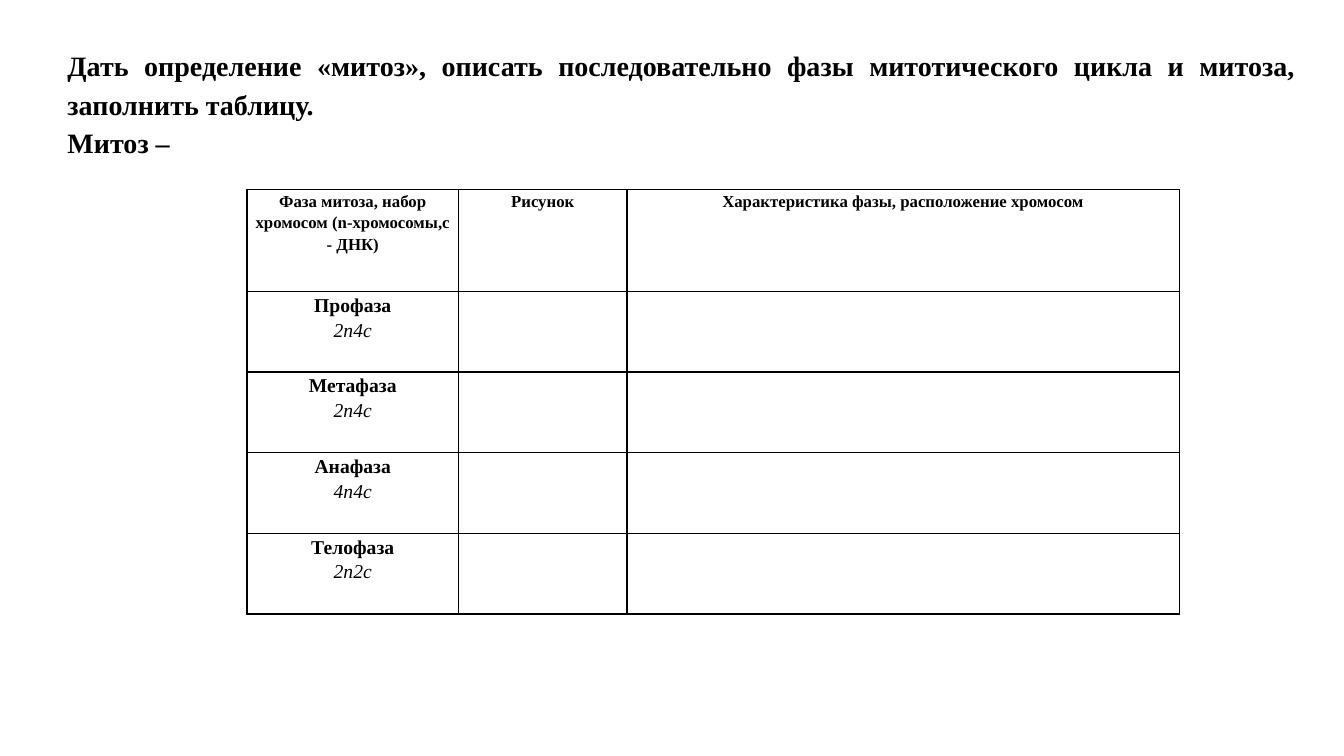
from lxml.etree import SubElement as Sub
from pptx import Presentation
from pptx.dml.color import RGBColor as Rgb
from pptx.enum.text import MSO_ANCHOR as Anchor, MSO_AUTO_SIZE as Auto, PP_ALIGN as Align
from pptx.oxml import parse_xml
from pptx.oxml.ns import nsdecls, qn
from pptx.util import Pt

HEX = {"ink": "000000"}
TASK = [
    "Дать определение «митоз», описать последовательно фазы митотического цикла и митоза, заполнить таблицу.",
    "Митоз – ",
]
HEADS = [
    "Фаза митоза, набор хромосом (n-хромосомы,с - ДНК)",
    "Рисунок",
    "Характеристика фазы, расположение хромосом",
]
PHASES = [("Профаза", "2n4c"), ("Метафаза", "2n4c"), ("Анафаза", "4n4c"), ("Телофаза", "2n2c")]
COLS = [151.2, 120.3, 394.5]
ROWS = [72.7] + [57.6] * len(PHASES)


class Sheet:
    """Hold the slide and the style of its text and table."""

    def __init__(self, deck):
        self.slide = deck.slides.add_slide(deck.slide_layouts[5])
        self.font = "Times New Roman"
        self.ink = Rgb.from_string(HEX["ink"])

    def text(self, frame, lines, align):
        for i, (words, size, bold) in enumerate(lines):
            para = frame.paragraphs[0] if i == 0 else frame.add_paragraph()
            para.alignment = align
            para.line_spacing = 1.15
            para.space_before = Pt(0)
            run = para.add_run()
            run.text = words
            font = run.font
            font.name, font.size = self.font, Pt(size)
            font.bold, font.italic = bold, not bold
            font.color.rgb = self.ink

    def title(self, box, lines):
        shape = self.slide.shapes.title
        shape.left, shape.top, shape.width, shape.height = map(Pt, box)
        frame = shape.text_frame
        frame.word_wrap = True
        frame.auto_size = Auto.SHAPE_TO_FIT_TEXT
        frame.vertical_anchor = Anchor.TOP
        self.text(frame, lines, Align.JUSTIFY)

    def border(self, cell):
        props = cell._tc.get_or_add_tcPr()
        for i, side in enumerate("LRTB"):
            line = parse_xml(f'<a:ln{side} {nsdecls("a")} w="{Pt(1)}"/>')
            fill = Sub(line, qn("a:solidFill"))
            Sub(fill, qn("a:srgbClr"), val=HEX["ink"])
            props.insert(i, line)

    def table(self, left, top, rows):
        size = Pt(sum(COLS)), Pt(sum(ROWS))
        frame = self.slide.shapes.add_table(len(ROWS), len(COLS), Pt(left), Pt(top), *size)
        grid = frame.table
        grid.first_row = grid.horz_banding = False
        for col, width in zip(grid.columns, COLS):
            col.width = Pt(width)
        for row, height, texts in zip(grid.rows, ROWS, rows):
            row.height = Pt(height)
            for cell, lines in zip(row.cells, texts):
                cell.fill.background()
                self.border(cell)
                cell.margin_left = cell.margin_right = Pt(5)
                cell.margin_top = cell.margin_bottom = Pt(0)
                self.text(cell.text_frame, lines, Align.CENTER)


def main():
    deck = Presentation()
    deck.slide_width, deck.slide_height = Pt(960), Pt(540)
    sheet = Sheet(deck)
    rows = [[[(head, 12, True)] for head in HEADS]]
    rows += [[[(name, 14, True), (code, 14, False)], [], []] for name, code in PHASES]
    sheet.table(176.4, 135.5, rows)
    sheet.title((41, 27.4, 891.4, 90.7), [(words, 20, True) for words in TASK])
    deck.save("out.pptx")


if __name__ == "__main__":
    main()
